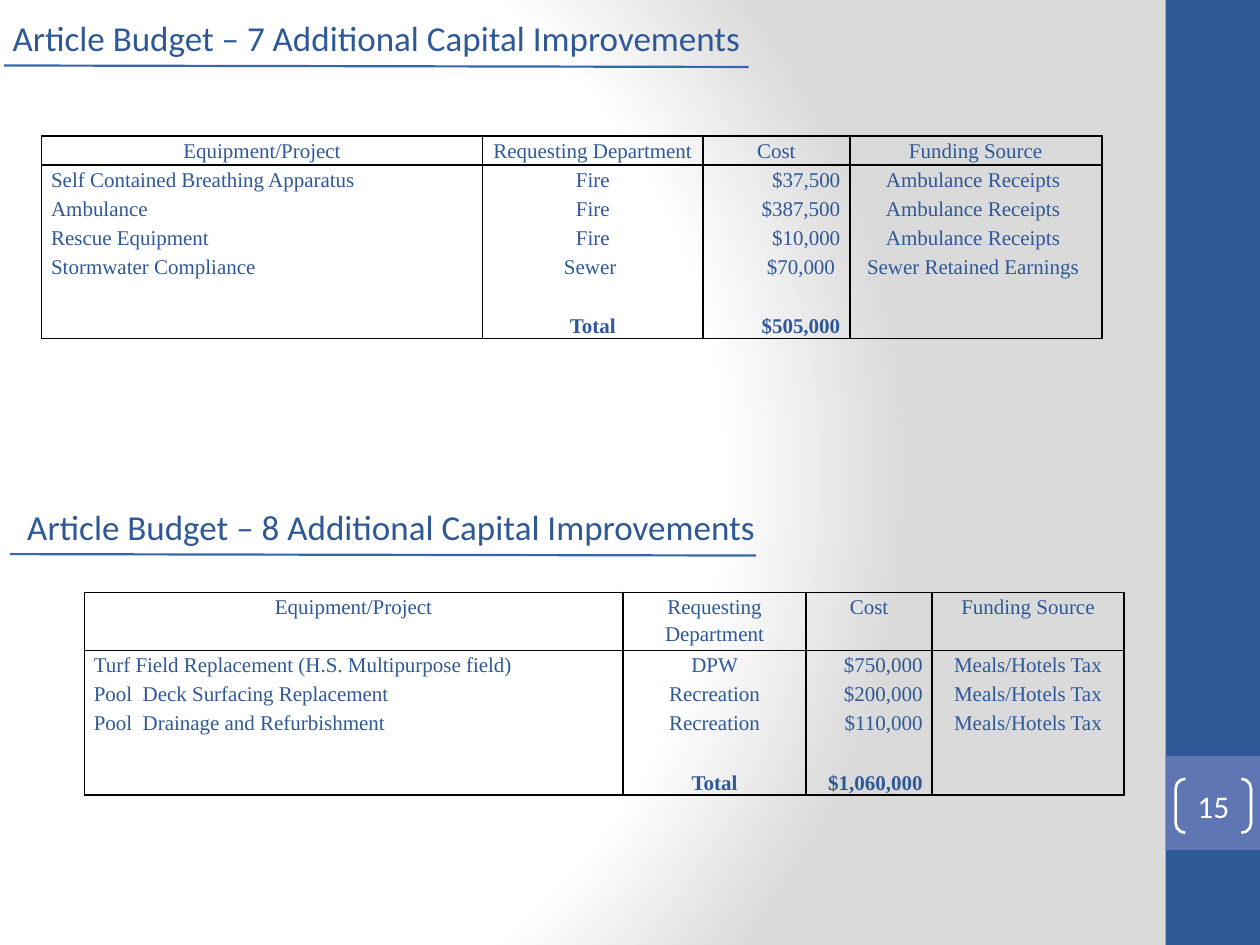
from dataclasses import dataclass

from pptx import Presentation, oxml, util as u
from pptx.dml.color import RGBColor
from pptx.enum import shapes, text
from pptx.oxml import ns

Align = text.PP_ALIGN
Anchor = text.MSO_ANCHOR


@dataclass(frozen=True)
class Theme:
    navy: RGBColor = RGBColor.from_string("2F5897")
    plate: RGBColor = RGBColor.from_string("6076B4")
    rule: RGBColor = RGBColor.from_string("3666AF")
    white: RGBColor = RGBColor.from_string("FFFFFF")
    border: str = "000000"
    heading_font: str = "Calibri"
    table_font: str = "Times New Roman"
    heading_size: u.Pt = u.Pt(20)
    number_size: u.Pt = u.Pt(18)
    table_size: u.Pt = u.Pt(12)


@dataclass(frozen=True)
class Heading:
    words: str
    left: float
    top: float
    rule: tuple[float, float, float, float]


@dataclass(frozen=True)
class BudgetTable:
    left: float
    top: float
    columns: tuple[float, ...]
    lines: tuple[int, ...]  # height of each row, in text lines
    rows: tuple[tuple[str, ...], ...]


THEME = Theme()
LINE_HEIGHT = 0.58
HEADER = ("Equipment/Project", "Requesting Department", "Cost", "Funding Source")
COLUMN_ALIGN = (Align.LEFT, Align.CENTER, Align.RIGHT, Align.CENTER)
NO_STYLE = "{2D5ABB26-0587-4C30-8999-92F81FD0307C}"

HEADINGS = (
    Heading("Article Budget – 7 Additional Capital Improvements", 0, 0.2,
            (0.08, 1.32, 15.09, 1.35)),
    Heading("Article Budget – 8 Additional Capital Improvements", 0.3, 10.06,
            (0.2, 11.17, 15.24, 11.2)),
)
TABLES = (
    BudgetTable(0.84, 2.74, (8.89, 4.44, 2.96, 5.08), (1, 1, 1, 1, 1, 2), (
        HEADER,
        ("Self Contained Breathing Apparatus", "Fire", "$37,500", "Ambulance Receipts "),
        ("Ambulance", "Fire", "$387,500", "Ambulance Receipts "),
        ("Rescue Equipment", "Fire", "$10,000", "Ambulance Receipts "),
        ("Stormwater Compliance", "Sewer ", "$70,000 ", "Sewer Retained Earnings "),
        ("", "Total", "$505,000", ""),
    )),
    BudgetTable(1.7, 11.94, (10.86, 3.69, 2.54, 3.87), (2, 1, 1, 1, 1, 1), (
        HEADER,
        ("Turf Field Replacement (H.S. Multipurpose field)", "DPW", "$750,000",
         "Meals/Hotels Tax"),
        ("Pool  Deck Surfacing Replacement", "Recreation", "$200,000", "Meals/Hotels Tax"),
        ("Pool  Drainage and Refurbishment", "Recreation", "$110,000", "Meals/Hotels Tax"),
        ("", "", "", ""),
        ("", "Total", "$1,060,000", ""),
    )),
)


def set_font(font, name: str, size: u.Pt, color: RGBColor, bold: bool = False) -> None:
    font.name, font.size, font.bold = name, size, bold
    font.color.rgb = color


def paint_background(slide) -> None:
    """White glow from the left, fading to grey."""
    slide.background.fill.gradient()
    gradient = slide.element.find(".//" + ns.qn("a:gradFill"))
    gradient.getparent().replace(gradient, oxml.parse_xml(
        f'<a:gradFill {ns.nsdecls("a")} rotWithShape="1"><a:gsLst>'
        '<a:gs pos="0"><a:srgbClr val="FFFFFF"/></a:gs>'
        '<a:gs pos="75000"><a:srgbClr val="FFFFFF"/></a:gs>'
        '<a:gs pos="100000"><a:srgbClr val="DADADA"/></a:gs></a:gsLst>'
        '<a:path path="circle"><a:fillToRect l="20000" t="50000" r="100000" b="50000"/>'
        '</a:path></a:gradFill>'))


def add_block(slide, top: float, height: float, color: RGBColor) -> None:
    block = slide.shapes.add_shape(shapes.MSO_SHAPE.RECTANGLE, u.Cm(23.5), u.Cm(top),
                                   u.Cm(1.9), u.Cm(height))
    block.shadow.inherit = False
    block.fill.solid()
    block.fill.fore_color.rgb = color
    block.line.fill.background()


def add_page_number(slide, number: str) -> None:
    bracket = slide.shapes.add_shape(shapes.MSO_SHAPE.DOUBLE_BRACKET, u.Cm(23.7),
                                     u.Cm(15.7), u.Cm(1.52), u.Cm(1.09))
    bracket.adjustments[0] = 0.18
    bracket.shadow.inherit = False
    bracket.fill.background()
    bracket.line.color.rgb = THEME.white
    bracket.line.width = u.Pt(1.5)
    frame = bracket.text_frame
    frame.margin_left = frame.margin_right = frame.margin_top = frame.margin_bottom = 0
    frame.vertical_anchor = Anchor.MIDDLE
    frame.text = number
    frame.paragraphs[0].alignment = Align.CENTER
    set_font(frame.paragraphs[0].font, THEME.heading_font, THEME.number_size, THEME.white)


def write_heading(slide, box, heading: Heading) -> None:
    box.left, box.top = u.Cm(heading.left), u.Cm(heading.top)
    box.width, box.height = u.Cm(22.43), u.Cm(1.12)
    frame = box.text_frame
    frame.word_wrap = True
    frame.vertical_anchor = Anchor.TOP
    frame.text = heading.words
    frame.paragraphs[0].alignment = Align.LEFT
    set_font(frame.paragraphs[0].font, THEME.heading_font, THEME.heading_size, THEME.navy)

    rule = slide.shapes.add_connector(shapes.MSO_CONNECTOR.STRAIGHT,
                                      *(u.Cm(value) for value in heading.rule))
    rule.line.color.rgb = THEME.rule
    rule.line.width = u.Pt(1.25)
    rule.element.spPr.append(oxml.parse_xml(f'<a:effectLst {ns.nsdecls("a")}/>'))


def set_borders(cell, sides: str) -> None:
    """Draw a 1 pt border on the given sides; the others stay bare."""
    properties = cell._tc.get_or_add_tcPr()
    for place, side in enumerate("LRTB"):
        fill = (f'<a:solidFill><a:srgbClr val="{THEME.border}"/></a:solidFill>'
                if side in sides else "<a:noFill/>")
        properties.insert(place, oxml.parse_xml(
            f'<a:ln{side} {ns.nsdecls("a")} w="12700">{fill}</a:ln{side}>'))


def add_budget_table(slide, budget: BudgetTable) -> None:
    count = len(budget.rows)
    table = slide.shapes.add_table(
        count, len(HEADER), u.Cm(budget.left), u.Cm(budget.top),
        u.Cm(sum(budget.columns)), u.Cm(LINE_HEIGHT * sum(budget.lines))).table
    table.first_row = table.horz_banding = False
    table._tbl.tblPr.find(ns.qn("a:tableStyleId")).text = NO_STYLE
    for column, width in zip(table.columns, budget.columns):
        column.width = u.Cm(width)
    for r, (words, lines) in enumerate(zip(budget.rows, budget.lines)):
        table.rows[r].height = u.Cm(LINE_HEIGHT * lines)
        is_header, is_total = r == 0, r == count - 1
        sides = "LR" + ("T" if r < 2 else "") + ("B" if is_header or is_total else "")
        for c, word in enumerate(words):
            cell = table.cell(r, c)
            cell.fill.background()
            cell.margin_left = cell.margin_right = u.Cm(0.19)
            cell.margin_top = cell.margin_bottom = 0
            cell.vertical_anchor = Anchor.BOTTOM if is_total else Anchor.TOP
            set_borders(cell, sides)
            paragraph = cell.text_frame.paragraphs[0]
            if word:
                paragraph.text = word
            else:  # keeps an empty cell one text line high
                paragraph._p.append(oxml.parse_xml(
                    f'<a:endParaRPr {ns.nsdecls("a")} sz="{THEME.table_size.centipoints}"/>'))
            paragraph.alignment = Align.CENTER if is_header else COLUMN_ALIGN[c]
            paragraph.line_spacing = 1.15
            set_font(paragraph.font, THEME.table_font, THEME.table_size, THEME.navy, is_total)


def main() -> None:
    deck = Presentation()
    deck.slide_width, deck.slide_height = u.Cm(25.4), u.Cm(19.05)
    slide = deck.slides.add_slide(deck.slide_layouts[5])
    paint_background(slide)

    # Side rail with the page number
    add_block(slide, 0, 19.05, THEME.navy)
    add_block(slide, 15.24, 1.9, THEME.plate)
    add_page_number(slide, "15")

    # Two articles: heading, rule and table
    second_box = slide.shapes.add_textbox(0, 0, 0, 0)
    for box, heading in zip((slide.shapes.title, second_box), HEADINGS):
        write_heading(slide, box, heading)
    for budget in TABLES:
        add_budget_table(slide, budget)

    deck.save("out.pptx")


if __name__ == "__main__":
    main()
